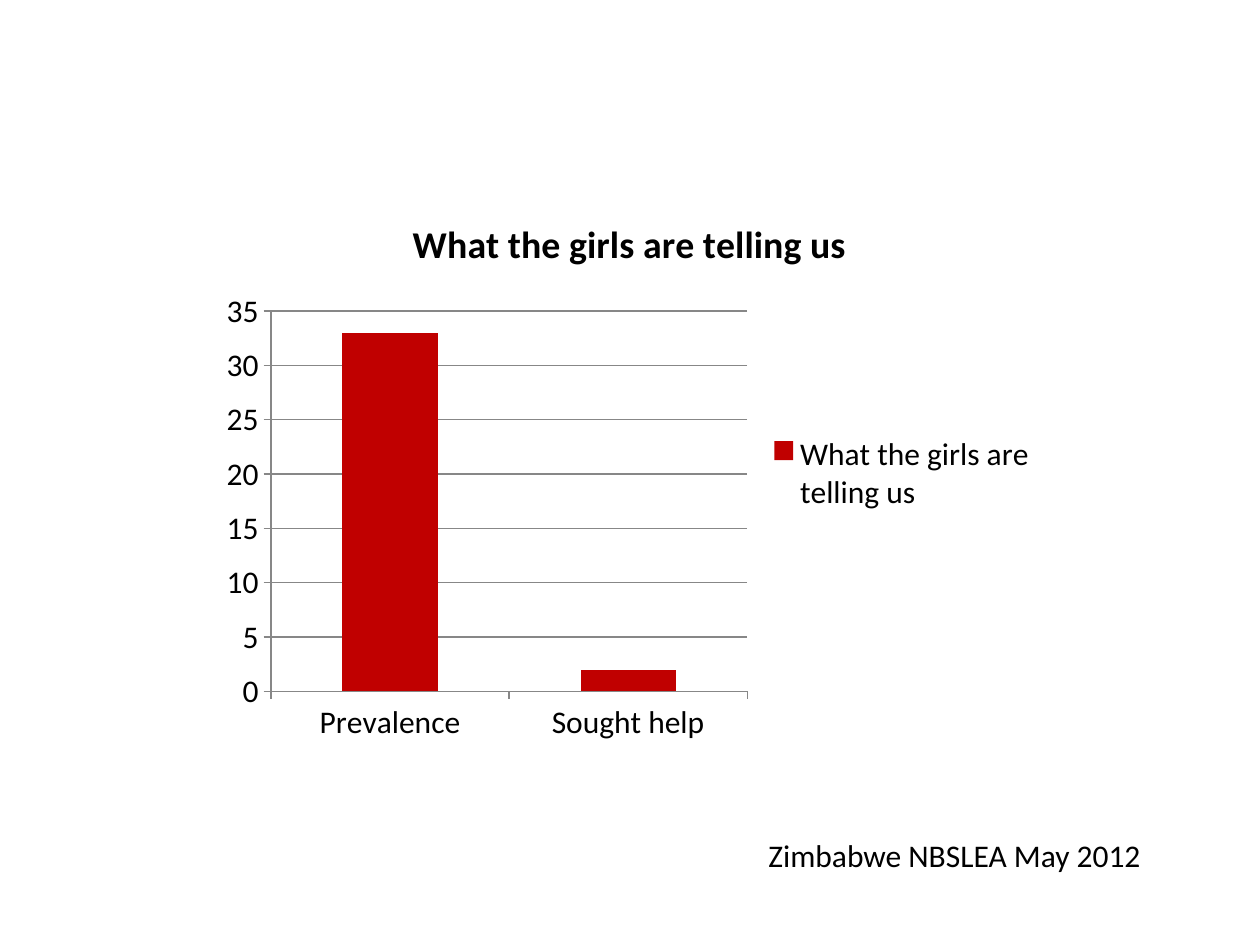
import pptx
import pptx.util
import pptx.chart.data
import pptx.dml.color
import pptx.enum.chart
import pptx.enum.text
from pptx.util import Cm

HEADING = "What the girls are telling us"
SHARES = {"Prevalence": 33, "Sought help": 2}
SOURCE_NOTE = "Zimbabwe NBSLEA May 2012"

FONT = "Calibri"
BLACK, RED, GREY = "000000", "C00000", "878787"


def rgb(color):
    return pptx.dml.color.RGBColor.from_string(color)


def style_font(font, size=18, color=BLACK, bold=False):
    font.name = FONT
    font.size = pptx.util.Pt(size)
    font.bold = bold
    font.color.rgb = rgb(color)


def write(frame, text, **style):
    """Put one formatted run into a text frame."""
    run = frame.paragraphs[0].add_run()
    run.text = text
    style_font(run.font, **style)


def style_line(line, color=GREY, width=0.75):
    line.color.rgb = rgb(color)
    line.width = pptx.util.Pt(width)


def add_shares_chart(slide):
    data = pptx.chart.data.CategoryChartData()
    data.categories = list(SHARES)
    data.add_series(HEADING, list(SHARES.values()))
    chart = slide.shapes.add_chart(
        pptx.enum.chart.XL_CHART_TYPE.COLUMN_STACKED,
        Cm(4.23), Cm(3.89), Cm(16.93), Cm(11.29), data).chart
    style_font(chart.font)

    chart.has_title = True
    write(chart.chart_title.text_frame, HEADING, size=21.6, bold=True)
    chart.chart_title.include_in_layout = False

    chart.has_legend = True
    chart.legend.position = pptx.enum.chart.XL_LEGEND_POSITION.RIGHT
    chart.legend.include_in_layout = False

    columns = chart.plots[0]
    columns.gap_width = 150
    columns.overlap = 100
    columns.vary_by_categories = False
    fill = columns.series[0].format.fill
    fill.solid()
    fill.fore_color.rgb = rgb(RED)

    for axis in (chart.category_axis, chart.value_axis):
        axis.major_tick_mark = pptx.enum.chart.XL_TICK_MARK.OUTSIDE
        style_line(axis.format.line)
    chart.value_axis.has_major_gridlines = True
    style_line(chart.value_axis.major_gridlines.format.line)


def add_source_note(slide):
    frame = slide.shapes.add_textbox(
        Cm(15.24), Cm(16.72), Cm(8.05), Cm(1.06)).text_frame
    frame.word_wrap = True
    frame.auto_size = pptx.enum.text.MSO_AUTO_SIZE.SHAPE_TO_FIT_TEXT
    write(frame, SOURCE_NOTE)


def main():
    deck = pptx.Presentation()
    deck.slide_width, deck.slide_height = Cm(25.4), Cm(19.05)
    slide = deck.slides.add_slide(deck.slide_layouts.get_by_name("Blank"))
    add_shares_chart(slide)
    add_source_note(slide)
    deck.save("out.pptx")


if __name__ == "__main__":
    main()
